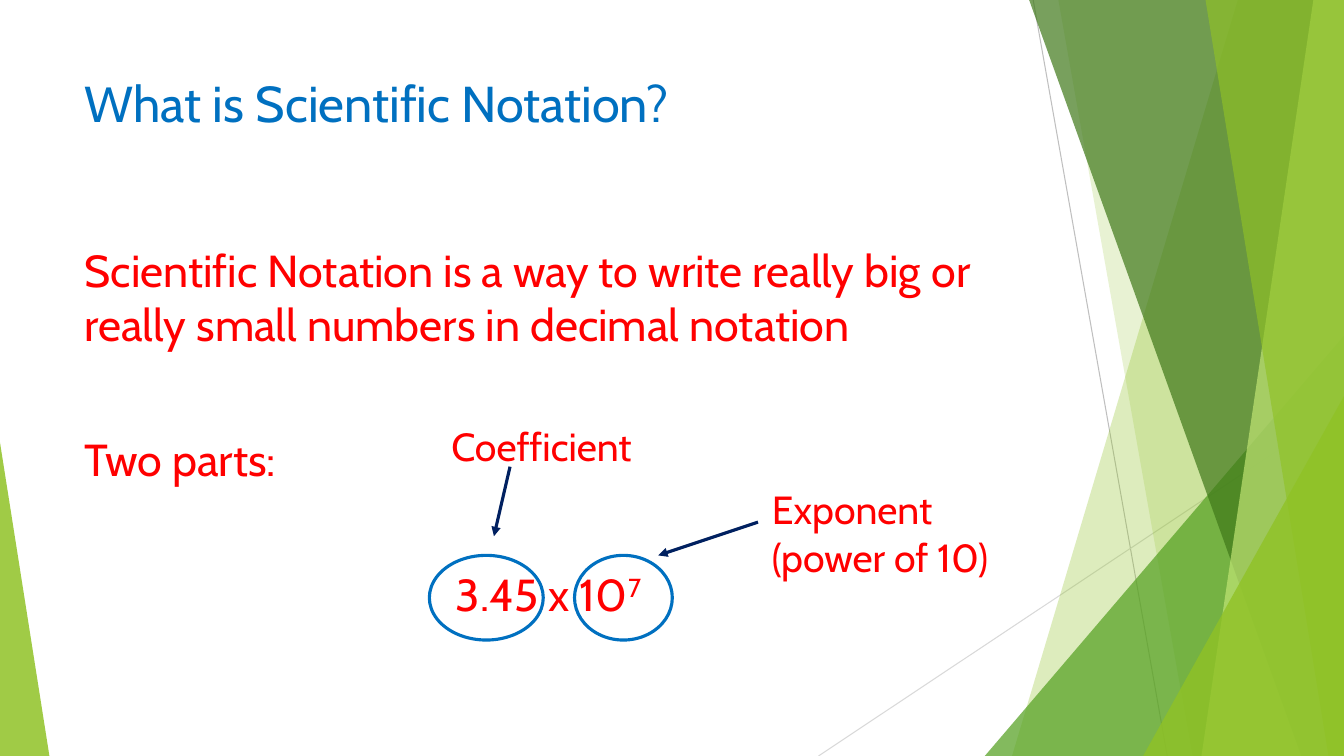
"""Build the slide that explains the two parts of scientific notation."""
from lxml.etree import SubElement
from pptx import Presentation
from pptx.dml.color import RGBColor
from pptx.enum.shapes import MSO_CONNECTOR, MSO_SHAPE
from pptx.enum.text import MSO_ANCHOR, MSO_AUTO_SIZE, PP_ALIGN
from pptx.oxml.ns import qn
from pptx.util import Pt

COLORS = {
    "blue": "0070C0", "red": "FF0000", "navy": "002060",
    "grey": "BFBFBF", "pale_grey": "D9D9D9",
    "lime": "90C226", "green": "54A021", "forest": "3F7819", "light_lime": "C0E474",
}
WIDTH, HEIGHT = 960, 540


def write(paragraph, text, size=32, color="red", align=PP_ALIGN.LEFT, before=0, baseline=0):
    """Append a formatted run to a paragraph."""
    paragraph.alignment = align
    paragraph.space_before = Pt(before)
    run = paragraph.add_run()
    run.text = text
    run.font.name = "Cabin"
    run.font.size = Pt(size)
    run.font.color.rgb = RGBColor.from_string(COLORS[color])
    if baseline:
        run.font._element.set("baseline", str(baseline * 1000))


def draw_line(start, end, color, width, arrow=False):
    """Draw a straight line, with an arrowhead at its end if wanted."""
    line = slide.shapes.add_connector(
        MSO_CONNECTOR.STRAIGHT, *(Pt(value) for value in start + end))
    line.line.color.rgb = RGBColor.from_string(COLORS[color])
    line.line.width = Pt(width)
    if arrow:
        SubElement(line.line._get_or_add_ln(), qn("a:tailEnd"), type="triangle")
    SubElement(line._element.spPr, qn("a:effectLst"))


presentation = Presentation()
presentation.slide_width, presentation.slide_height = Pt(WIDTH), Pt(HEIGHT)
slide = presentation.slides.add_slide(presentation.slide_layouts[1])

draw_line((738, 0), (833.76, HEIGHT), "grey", 0.75)
draw_line((WIDTH, 290.16), (584.64, HEIGHT), "pale_grey", 0.75)

panels = [
    ("panel", 884.16, 722.88, "lime", 30),
    ("panel", 756, 851.76, "lime", 20),
    ("triangle", 703.44, 239.76, 256.56, 1, "green", 72),
    ("panel", 735.12, 929.52, "forest", 70),
    ("panel", 938.16, 858.24, "light_lime", 70),
    ("panel", 861.12, 948.96, "lime", 65),
    ("triangle", 816.48, 282.96, 143.52, 1, "lime", 80),
    ("triangle", 0, 316.08, 35.28, 0, "lime", 85),
]
for outline, *geometry, color, opacity in panels:
    if outline == "panel":
        top_x, bottom_x = geometry
        builder = slide.shapes.build_freeform(Pt(top_x), 0)
        corners = [(WIDTH, 0), (WIDTH, HEIGHT), (bottom_x, HEIGHT)]
        builder.add_line_segments([(Pt(x), Pt(y)) for x, y in corners], close=True)
        panel = builder.convert_to_shape()
    else:
        left, top, width, apex = geometry
        panel = slide.shapes.add_shape(
            MSO_SHAPE.ISOSCELES_TRIANGLE, Pt(left), Pt(top), Pt(width), Pt(HEIGHT - top))
        panel.adjustments[0] = apex
    panel.shadow.inherit = False
    panel.line.fill.background()
    panel.fill.solid()
    panel.fill.fore_color.rgb = RGBColor.from_string(COLORS[color])
    tint = panel._element.spPr.find(f"{qn('a:solidFill')}/{qn('a:srgbClr')}")
    SubElement(tint, qn("a:alpha"), val=str(opacity * 1000))

title, body = slide.placeholders
for placeholder, top, height in [(title, 48.24, 103.68), (body, 169.92, 305.28)]:
    placeholder.left, placeholder.top = Pt(53.28), Pt(top)
    placeholder.width, placeholder.height = Pt(676.8), Pt(height)
    placeholder.text_frame.vertical_anchor = MSO_ANCHOR.TOP
    placeholder.text_frame.auto_size = MSO_AUTO_SIZE.NONE

write(title.text_frame.paragraphs[0], "What is Scientific Notation?", size=36, color="blue")

definition = body.text_frame.paragraphs[0]
parts = body.text_frame.add_paragraph()
example = body.text_frame.add_paragraph()
write(definition, "Scientific Notation is a way to write really big or "
      "really small numbers in decimal notation")
write(parts, "Two parts:", before=58)
write(example, "3.45 x 10", align=PP_ALIGN.CENTER, before=58)
write(example, "7", align=PP_ALIGN.CENTER, before=58, baseline=30)
for paragraph in body.text_frame.paragraphs:
    properties = paragraph._p.get_or_add_pPr()
    properties.set("marL", "0")
    properties.set("indent", "0")
    SubElement(properties, qn("a:buNone"))

for left, width in [(306.72, 81.36), (410.4, 69.84)]:
    ring = slide.shapes.add_shape(MSO_SHAPE.OVAL, Pt(left), Pt(396.72), Pt(width), Pt(60.48))
    ring.shadow.inherit = False
    ring.fill.background()
    ring.line.color.rgb = RGBColor.from_string(COLORS["blue"])
    ring.line.width = Pt(2.25)

draw_line((364.32, 333.36), (352.8, 383.04), "navy", 2.25, arrow=True)
draw_line((541.44, 372.96), (470.16, 396.72), "navy", 2.25, arrow=True)

labels = [("Coefficient", 315.36, 298.08, 41.04), ("Exponent (power of 10)", 544.32, 343.44, 74.88)]
for text, left, top, height in labels:
    label = slide.shapes.add_textbox(Pt(left), Pt(top), Pt(205.2), Pt(height))
    label.text_frame.word_wrap = True
    label.text_frame.auto_size = MSO_AUTO_SIZE.SHAPE_TO_FIT_TEXT
    write(label.text_frame.paragraphs[0], text, size=28)

presentation.save("out.pptx")
